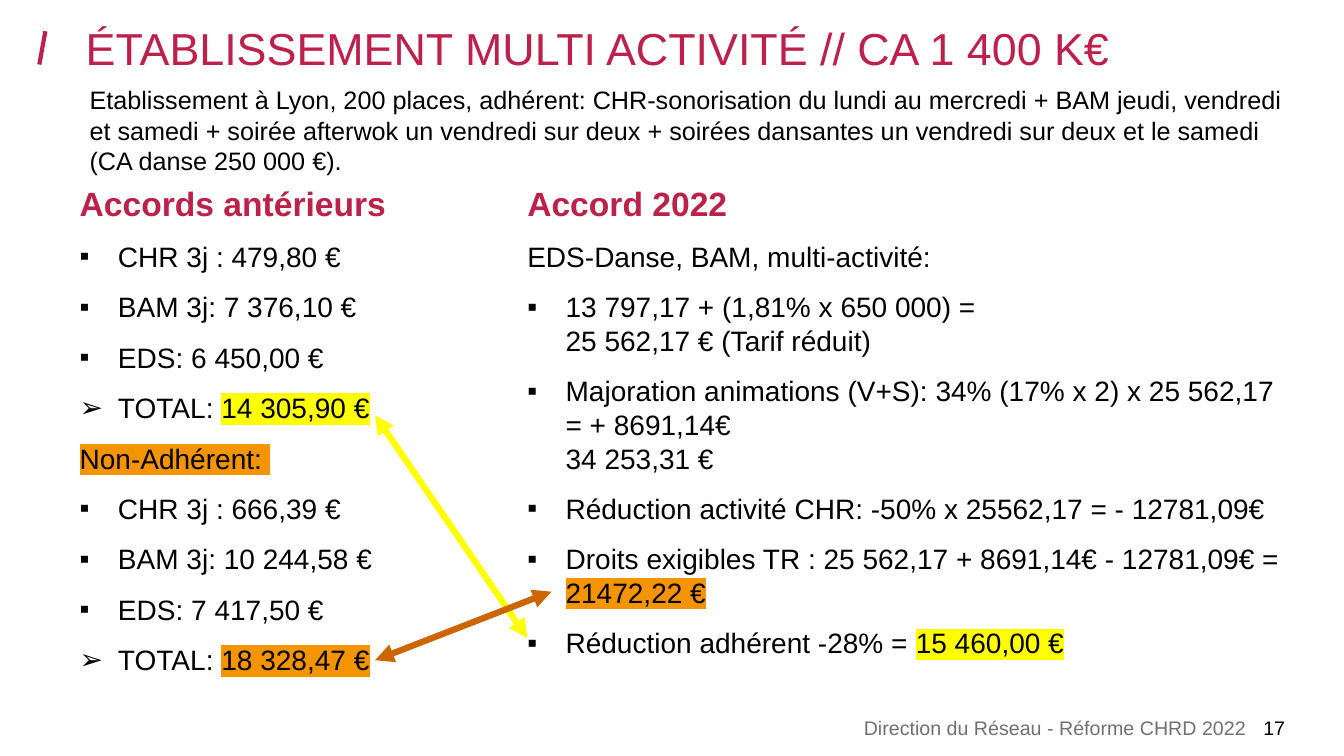
from pptx import Presentation
from pptx.dml.color import RGBColor
from pptx.enum.shapes import MSO_CONNECTOR
from pptx.enum.text import MSO_ANCHOR, PP_ALIGN
from pptx.oxml.ns import qn
from pptx.util import Inches, Pt
from lxml import etree

STRAIGHT = MSO_CONNECTOR.STRAIGHT
TOP = MSO_ANCHOR.TOP
LEFT = PP_ALIGN.LEFT
RIGHT = PP_ALIGN.RIGHT
CRIMSON = RGBColor(0xBC, 0x20, 0x4B)
ROSE = RGBColor(0xBC, 0x21, 0x4A)
BLACK = RGBColor(0, 0, 0)
GREY = RGBColor(0x6F, 0x70, 0x72)
YELLOW = RGBColor(0xFF, 0xFF, 0)
ORANGE = RGBColor(0xF4, 0x94, 0x01)
BROWN = RGBColor(0xCC, 0x66, 0)
SQUARE, ARROW = "▪", "➢"


class Deck:
    font = "Arial"
    indent = Inches(0.38)
    gap = Pt(12)

    def __init__(self):
        self.prs = Presentation()
        self.prs.slide_width = Inches(13.33)
        self.prs.slide_height = Inches(7.5)
        self.slide = self.prs.slides.add_slide(self.prs.slide_layouts[6])

    def frame(self, box, pad=(0, 0)):
        shape = self.slide.shapes.add_textbox(*map(Inches, box))
        frame = shape.text_frame
        side, edge = map(Inches, pad)
        style = {"word_wrap": True, "vertical_anchor": TOP,
                 "margin_left": side, "margin_right": side,
                 "margin_top": edge, "margin_bottom": edge}
        for key, value in style.items():
            setattr(frame, key, value)
        return frame

    def run(self, para, text, size, color, bold=False, mark=None):
        for row, part in enumerate(text.split("\n")):
            if row:
                para.add_line_break()
            run = para.add_run()
            run.text = part
            style = {"name": self.font, "size": Pt(size), "bold": bold}
            for key, value in style.items():
                setattr(run.font, key, value)
            run.font.color.rgb = color
            if mark is not None:
                light = etree.Element(qn("a:highlight"))
                etree.SubElement(light, qn("a:srgbClr"), val=str(mark))
                run.font._element.find(qn("a:solidFill")).addnext(light)

    def text(self, box, text, size, color, align=LEFT, space=None, pad=(0, 0)):
        para = self.frame(box, pad).paragraphs[0]
        para.alignment = align
        para.line_spacing = space
        self.run(para, text, size, color)

    def bullet(self, para, sign):
        props = para._p.get_or_add_pPr()
        props.set("marL", str(self.indent))
        props.set("indent", str(-self.indent))
        etree.SubElement(props, qn("a:buFont"), typeface=self.font)
        etree.SubElement(props, qn("a:buChar"), char=sign)

    def column(self, box, head, items):
        frame = self.frame(box)
        self.run(frame.paragraphs[0], head, 24, ROSE, True)
        for sign, text, *marked in items:
            para = frame.add_paragraph()
            if sign:
                self.bullet(para, sign)
            para.space_before = self.gap
            if text:
                self.run(para, text, 20, BLACK)
            if marked:
                self.run(para, marked[0], 20, BLACK, mark=marked[1])

    def line(self, start, end, color, width, heads=False):
        line = self.slide.shapes.add_connector(
            STRAIGHT, *map(Inches, start + end))
        line.line.width = Pt(width)
        line.line.color.rgb = color
        props = line._element.spPr
        if heads:
            for tag in ("a:headEnd", "a:tailEnd"):
                etree.SubElement(props.find(qn("a:ln")), qn(tag), type="triangle")
        etree.SubElement(props, qn("a:effectLst"))


def main():
    deck = Deck()
    deck.line((0.39, 0.64), (0.45, 0.31), CRIMSON, 3)
    deck.text((0.85, 0.31, 12.03, 0.76),
              "ÉTABLISSEMENT MULTI ACTIVITÉ // CA 1 400 K€", 32, CRIMSON, space=0.8)
    deck.column((0.79, 1.81, 4.4, 4.6), "Accords antérieurs", [
        (SQUARE, "CHR 3j : 479,80 €"),
        (SQUARE, "BAM 3j: 7 376,10 €"),
        (SQUARE, "EDS: 6 450,00 €"),
        (ARROW, "TOTAL: ", "14 305,90 €", YELLOW),
        (None, "", "Non-Adhérent: ", ORANGE),
        (SQUARE, "CHR 3j : 666,39 €"),
        (SQUARE, "BAM 3j: 10 244,58 €"),
        (SQUARE, "EDS: 7 417,50 €"),
        (ARROW, "TOTAL: ", "18 328,47 €", ORANGE),
    ])
    deck.text((7.24, 7.1, 5.12, 0.24),
              "Direction du Réseau - Réforme CHRD 2022", 14, GREY, RIGHT)
    deck.text((12.53, 7.1, 0.44, 0.24), "17", 14, BLACK)
    deck.column((5.23, 1.81, 7.64, 5.2), "Accord 2022", [
        (None, "EDS-Danse, BAM, multi-activité:"),
        (SQUARE, "13 797,17 + (1,81% x 650 000) =\n25 562,17 € (Tarif réduit)"),
        (SQUARE, "Majoration animations (V+S): 34% (17% x 2) x 25 562,17 "
                 "= + 8691,14€\n34 253,31 €"),
        (SQUARE, "Réduction activité CHR: -50% x 25562,17 = - 12781,09€"),
        (SQUARE, "Droits exigibles TR : 25 562,17 + 8691,14€ - 12781,09€ = ",
         "21472,22 €", ORANGE),
        (SQUARE, "Réduction adhérent -28% = ", "15 460,00 €", YELLOW),
    ])
    deck.text((0.79, 0.79, 12.09, 1.01),
              "Etablissement à Lyon, 200 places, adhérent: CHR-sonorisation du "
              "lundi au mercredi + BAM jeudi, vendredi et samedi + soirée afterwok "
              "un vendredi sur deux + soirées dansantes un vendredi sur deux et "
              "le samedi (CA danse 250 000 €).", 18, BLACK, pad=(0.1, 0.05))
    deck.line((3.72, 4.12), (5.23, 6.33), YELLOW, 4.5, True)
    deck.line((3.72, 6.55), (5.47, 5.87), BROWN, 4.5, True)
    deck.prs.save("out.pptx")


if __name__ == "__main__":
    main()
